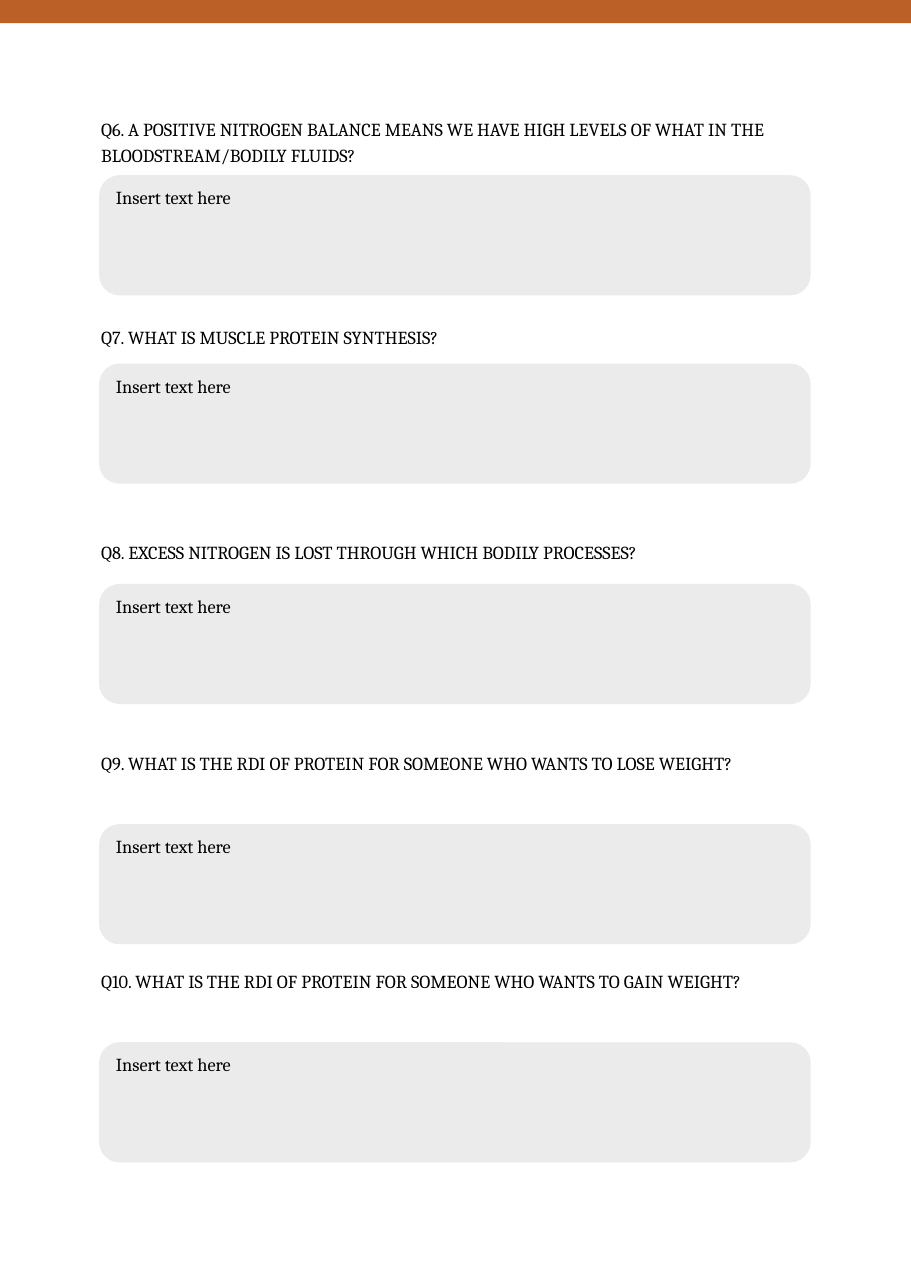
from pptx import Presentation
from pptx import util as u
from pptx.dml import color
from pptx.enum import shapes, text

COLUMNS, ROWS = 82.7, 116.9
CELL = u.Inches(0.1)
COLORS = {"band": "BB6128", "answer": "EBEBEB", "text": "000000"}
QUESTION_LEFT, ANSWER_LEFT, FIELD_WIDTH = 8.2, 9, 64.6
ANSWER_HEIGHT = 10.9
ONE_LINE, TWO_LINES = 3.4, 5.9

QUESTIONS = [
    ("Q6. A POSITIVE NITROGEN BALANCE MEANS WE HAVE HIGH LEVELS OF WHAT IN THE BLOODSTREAM/BODILY FLUIDS?",
     9.8, TWO_LINES, 15.9),
    ("Q7. WHAT IS MUSCLE PROTEIN SYNTHESIS?", 28.7, ONE_LINE, 33),
    ("Q8. EXCESS NITROGEN IS LOST THROUGH WHICH BODILY PROCESSES?", 48.2, ONE_LINE, 53),
    ("Q9. WHAT IS THE RDI OF PROTEIN FOR SOMEONE WHO WANTS TO LOSE WEIGHT?",
     67.4, TWO_LINES, 74.8),
    ("Q10. WHAT IS THE RDI OF PROTEIN FOR SOMEONE WHO WANTS TO GAIN WEIGHT?",
     87.2, TWO_LINES, 94.6),
]


class Worksheet:
    font_name = "Cambria"
    font_size = u.Pt(12)

    def __init__(self, slide):
        self.slide = slide

    def place(self, *cells):
        return [round(CELL * cell) for cell in cells]

    def set_text(self, shape, words, line_spacing=1.0):
        frame = shape.text_frame
        frame.word_wrap = True
        frame.vertical_anchor = text.MSO_ANCHOR.TOP
        paragraph = frame.paragraphs[0]
        paragraph.text = words
        paragraph.alignment = text.PP_ALIGN.LEFT
        paragraph.line_spacing = line_spacing
        paragraph.font.name = self.font_name
        paragraph.font.size = self.font_size
        paragraph.font.color.rgb = color.RGBColor.from_string(COLORS["text"])

    def panel(self, kind, fill, *cells):
        shape = self.slide.shapes.add_shape(kind, *self.place(*cells))
        shape.shadow.inherit = False
        shape.fill.solid()
        shape.fill.fore_color.rgb = color.RGBColor.from_string(COLORS[fill])
        shape.line.fill.background()
        return shape

    def band(self):
        self.panel(shapes.MSO_SHAPE.RECTANGLE, "band", 0, 0, COLUMNS, 2.1)

    def question(self, words, row, height):
        box = self.slide.shapes.add_textbox(
            *self.place(QUESTION_LEFT, row, FIELD_WIDTH, height))
        self.set_text(box, words, line_spacing=1.2)

    def answer(self, row):
        field = self.panel(shapes.MSO_SHAPE.ROUNDED_RECTANGLE, "answer",
                           ANSWER_LEFT, row, FIELD_WIDTH, ANSWER_HEIGHT)
        field.adjustments[0] = 0.17
        self.set_text(field, "Insert text here")


def main():
    presentation = Presentation()
    presentation.slide_width = round(CELL * COLUMNS)
    presentation.slide_height = round(CELL * ROWS)
    worksheet = Worksheet(presentation.slides.add_slide(presentation.slide_layouts[6]))
    worksheet.band()
    for words, question_row, height, answer_row in QUESTIONS:
        worksheet.question(words, question_row, height)
        worksheet.answer(answer_row)
    presentation.save("out.pptx")


if __name__ == "__main__":
    main()
